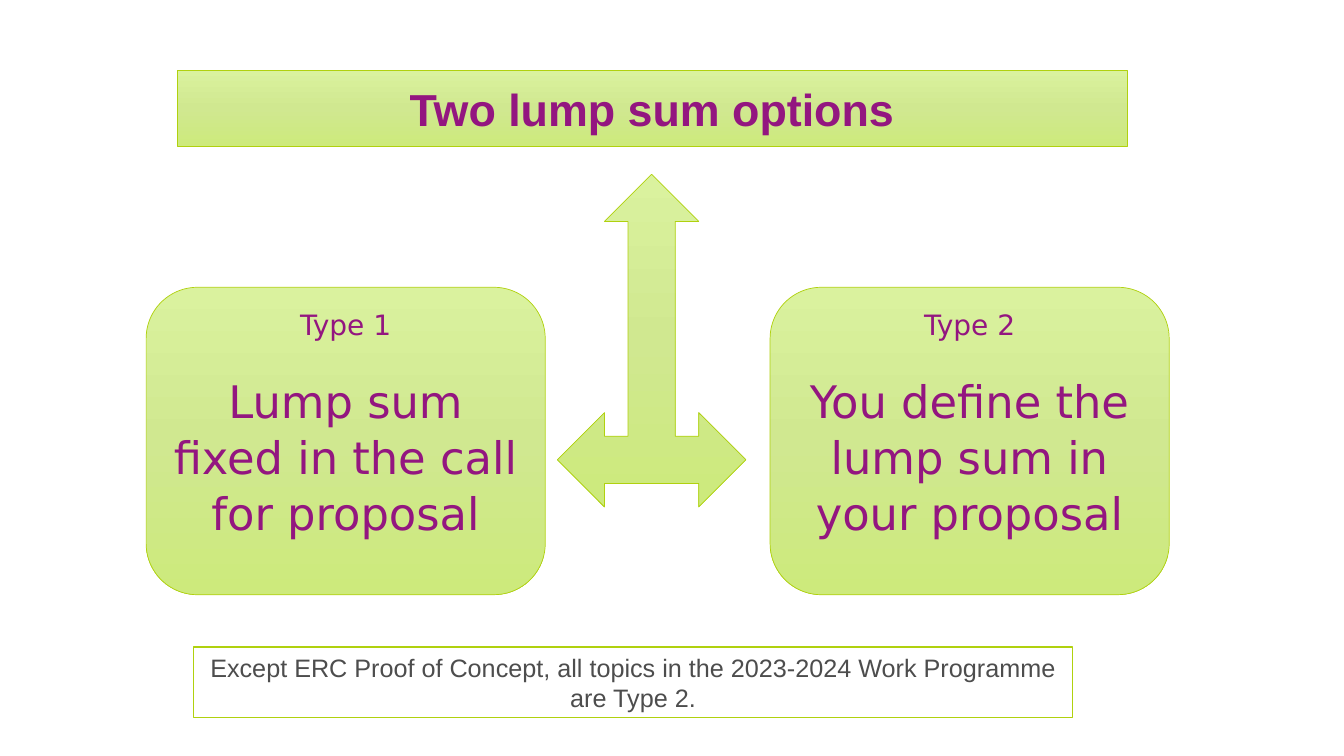
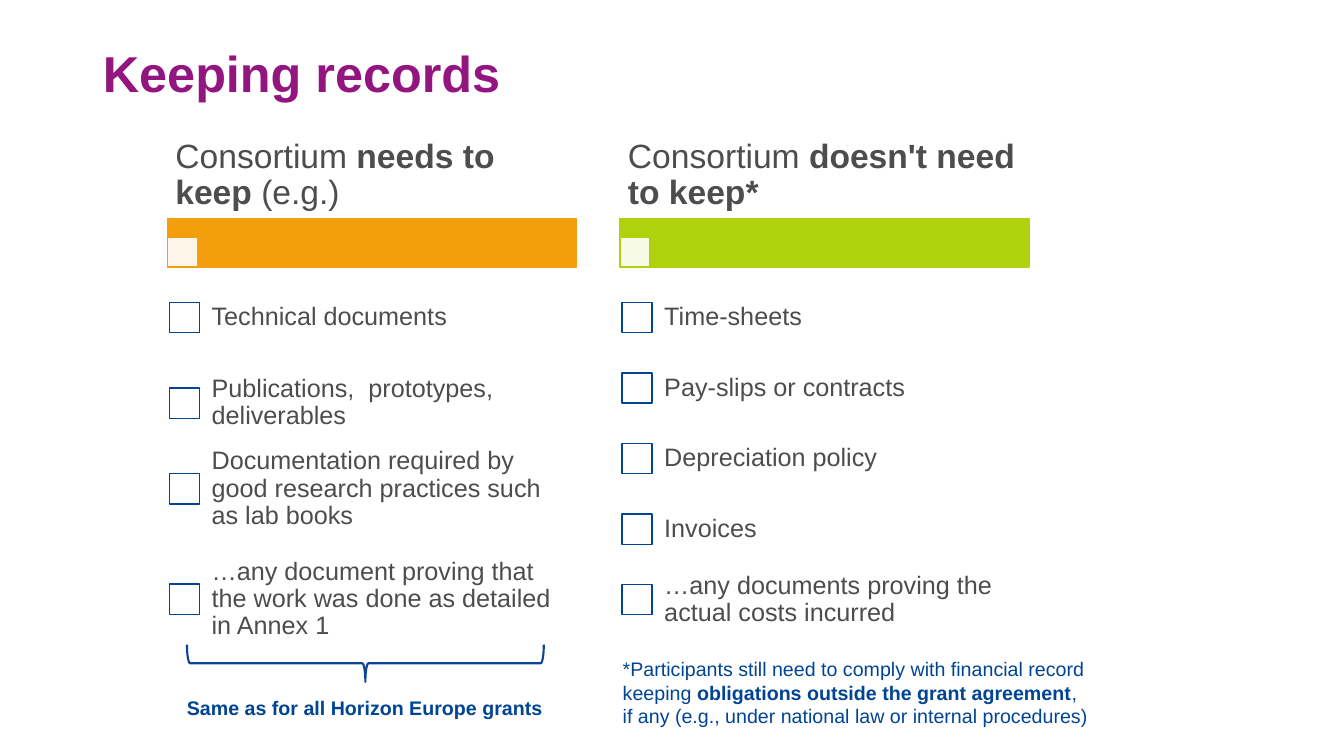
import copy

import pptx
import pptx.dml.color
import pptx.enum.shapes
import pptx.enum.text
import pptx.oxml
import pptx.oxml.ns
import pptx.util

PX = 9144  # EMU, 100 px to the inch
COLORS = {
    "purple": "931680", "grey": "4D4D4D", "blue": "004494", "brace": "0F4494",
    "lime": "B0D10E", "orange": "F39E0C", "white": "FFFFFF",
}
GRADIENT = [(0, "DAF29E"), (0.5, "D0E890"), (1, "CDEA7C")]
SHAPE = pptx.enum.shapes.MSO_SHAPE
ALIGN = pptx.enum.text.PP_ALIGN
ANCHOR = pptx.enum.text.MSO_ANCHOR
AUTO = pptx.enum.text.MSO_AUTO_SIZE
TITLE_ONLY = 5


def px(n):
    return pptx.util.Emu(round(n * PX))


def rgb(name):
    return pptx.dml.color.RGBColor.from_string(COLORS.get(name, name))


def set_line(sp, color, width):
    sp.line.color.rgb = rgb(color)
    sp.line.width = pptx.util.Pt(width)


def add_box(shapes, kind, box, fill, line, width=1.0):
    """Add a preset shape; fill None leaves it empty."""
    sp = shapes.add_shape(kind, *map(px, box))
    sp.shadow.inherit = False
    if fill:
        sp.fill.solid()
        sp.fill.fore_color.rgb = rgb(fill)
    else:
        sp.fill.background()
    set_line(sp, line, width)
    return sp


def paint_lime_gradient(sp):
    sp.fill.gradient()
    stops = sp.element.find(".//" + pptx.oxml.ns.qn("a:gsLst"))
    stops.append(copy.deepcopy(stops[-1]))
    for stop, (position, color) in zip(sp.fill.gradient_stops, GRADIENT):
        stop.position = position
        stop.color.rgb = rgb(color)
    sp.fill.gradient_angle = 270
    set_line(sp, "lime", 0.5)


def write(p, parts, size, color, font="Arial", align=ALIGN.LEFT):
    """Fill a paragraph with (text, bold) parts."""
    p.alignment = align
    for text, bold in parts:
        r = p.add_run()
        r.text = text
        r.font.name = font
        r.font.size = pptx.util.Pt(size)
        r.font.bold = bold
        r.font.color.rgb = rgb(color)


def set_frame(tf, anchor, insets=(10, 5, 10, 5), auto=AUTO.NONE):
    tf.word_wrap = True
    tf.auto_size = auto
    tf.vertical_anchor = anchor
    (tf.margin_left, tf.margin_top,
     tf.margin_right, tf.margin_bottom) = map(px, insets)


def add_text(shapes, box, parts, size, color, anchor=ANCHOR.TOP,
             insets=(10, 5, 10, 5), auto=AUTO.NONE, align=ALIGN.LEFT, spacing=None):
    tf = shapes.add_textbox(*map(px, box)).text_frame
    set_frame(tf, anchor, insets, auto)
    write(tf.paragraphs[0], parts, size, color, align=align)
    tf.paragraphs[0].line_spacing = spacing


def place_title(s, box, text, size, anchor, insets, align):
    sp = s.shapes.title
    sp.left, sp.top, sp.width, sp.height = map(px, box)
    set_frame(sp.text_frame, anchor, insets)
    p = sp.text_frame.paragraphs[0]
    write(p, [(text, True)], size, "purple", align=align)
    p.line_spacing = 0.9 if align == ALIGN.LEFT else 1.0
    return sp


def add_title_banner(s, box, text):
    sp = place_title(s, box, text, 32, ANCHOR.MIDDLE, (10, 5, 10, 5), ALIGN.CENTER)
    sp.element.spPr.append(pptx.oxml.parse_xml(
        '<a:prstGeom %s prst="roundRect"><a:avLst/></a:prstGeom>'
        % pptx.oxml.ns.nsdecls("a")))
    paint_lime_gradient(sp)


def add_type_card(s, box, label, statement):
    sp = add_box(s.shapes, SHAPE.ROUNDED_RECTANGLE, box, None, "lime")
    paint_lime_gradient(sp)
    tf = sp.text_frame
    set_frame(tf, ANCHOR.TOP)
    write(tf.paragraphs[0], [(label, False)], 20, "purple", "DejaVu Sans", ALIGN.CENTER)
    p = tf.add_paragraph()
    p.space_before = pptx.util.Pt(22)
    p.line_spacing = 1.04
    write(p, [(statement, False)], 32, "purple", "DejaVu Sans", ALIGN.CENTER)


def add_checklist(s, box, color, heading, items):
    """Add a column with a heading, a bar and (text, row height) items."""
    left, top, width = box
    shapes = s.shapes.add_group_shape().shapes
    check = 30
    bar_top, bar_height = top + 86, 48
    add_box(shapes, SHAPE.RECTANGLE, (left, bar_top, width, bar_height), color, color)
    tab = add_box(shapes, SHAPE.RECTANGLE,
                  (left, bar_top + bar_height - check, check, check), "white", color)
    white = tab.element.spPr.find(".//" + pptx.oxml.ns.qn("a:srgbClr"))
    white.append(pptx.oxml.parse_xml(
        '<a:alpha %s val="90000"/>' % pptx.oxml.ns.nsdecls("a")))
    add_text(shapes, (left + 3, top, width, 86), heading, 24, "grey",
             ANCHOR.MIDDLE, (5, 3, 5, 3), spacing=0.9)
    y = top + 149
    for text, height in items:
        add_box(shapes, SHAPE.RECTANGLE,
                (left + 2, y + (height - check) / 2, check, check), "white", "blue")
        add_text(shapes, (left + 30, y, width - 29, height), [(text, False)], 18,
                 "grey", ANCHOR.MIDDLE, (14, 14, 14, 14), spacing=0.9)
        y += height


def build_options(prs):
    s = prs.slides.add_slide(prs.slide_layouts[TITLE_ONLY])
    add_title_banner(s, (176, 70, 942, 75), "Two lump sum options")
    arrow = add_box(s.shapes, SHAPE.LEFT_RIGHT_UP_ARROW, (553, 173, 187, 330),
                    None, "lime")
    paint_lime_gradient(arrow)
    cards = [("Type 1", "Lump sum fixed in the call for proposal"),
             ("Type 2", "You define the lump sum in your proposal")]
    for i, (label, statement) in enumerate(cards):
        add_type_card(s, (145 + 619 * i, 285, 396, 305), label, statement)
    note = add_box(s.shapes, SHAPE.RECTANGLE, (192, 642, 872, 70), "white", "lime")
    set_frame(note.text_frame, ANCHOR.MIDDLE)
    write(note.text_frame.paragraphs[0],
          [("Except ERC Proof of Concept, all topics in the 2023-2024 Work Programme "
            "are Type 2.", False)], 18, "grey", align=ALIGN.CENTER)


def build_records(prs):
    s = prs.slides.add_slide(prs.slide_layouts[TITLE_ONLY])
    place_title(s, (92, 51, 1150, 52), "Keeping records", 36, ANCHOR.BOTTOM,
                (10, 5, 10, 0), ALIGN.LEFT)
    add_checklist(
        s, (166, 131, 406), "orange",
        [("Consortium ", False), ("needs to keep ", True), ("(e.g.)", False)],
        [("Technical documents", 70),
         ("Publications,  prototypes, deliverables", 100),
         ("Documentation required by good research practices such as lab books", 70),
         ("…any document proving that the work was done as detailed in Annex 1", 149)])
    costs = ["Time-sheets", "Pay-slips or contracts", "Depreciation policy", "Invoices",
             "…any documents proving the actual costs incurred"]
    add_checklist(s, (615, 131, 406), "lime",
                  [("Consortium ", False), ("doesn't need to keep*", True)],
                  [(text, 70) for text in costs])
    add_text(s.shapes, (172, 686, 380, 34),
             [("Same as for all Horizon Europe grants", True)], 14, "blue",
             auto=AUTO.SHAPE_TO_FIT_TEXT, align=ALIGN.CENTER)
    brace = add_box(s.shapes, SHAPE.LEFT_BRACE, (344, 481, 37, 354), None, "brace", 1.5)
    brace.rotation = 270
    add_text(s.shapes, (608, 647, 483, 81),
             [("*Participants still need to comply with financial record keeping ", False),
              ("obligations outside the grant agreement", True),
              (", if any (e.g., under national law or internal procedures)", False)],
             14, "blue", auto=AUTO.SHAPE_TO_FIT_TEXT)


def main():
    prs = pptx.Presentation()
    prs.slide_width, prs.slide_height = px(1333.33), px(750)
    build_options(prs)
    build_records(prs)
    prs.save("out.pptx")


if __name__ == "__main__":
    main()
